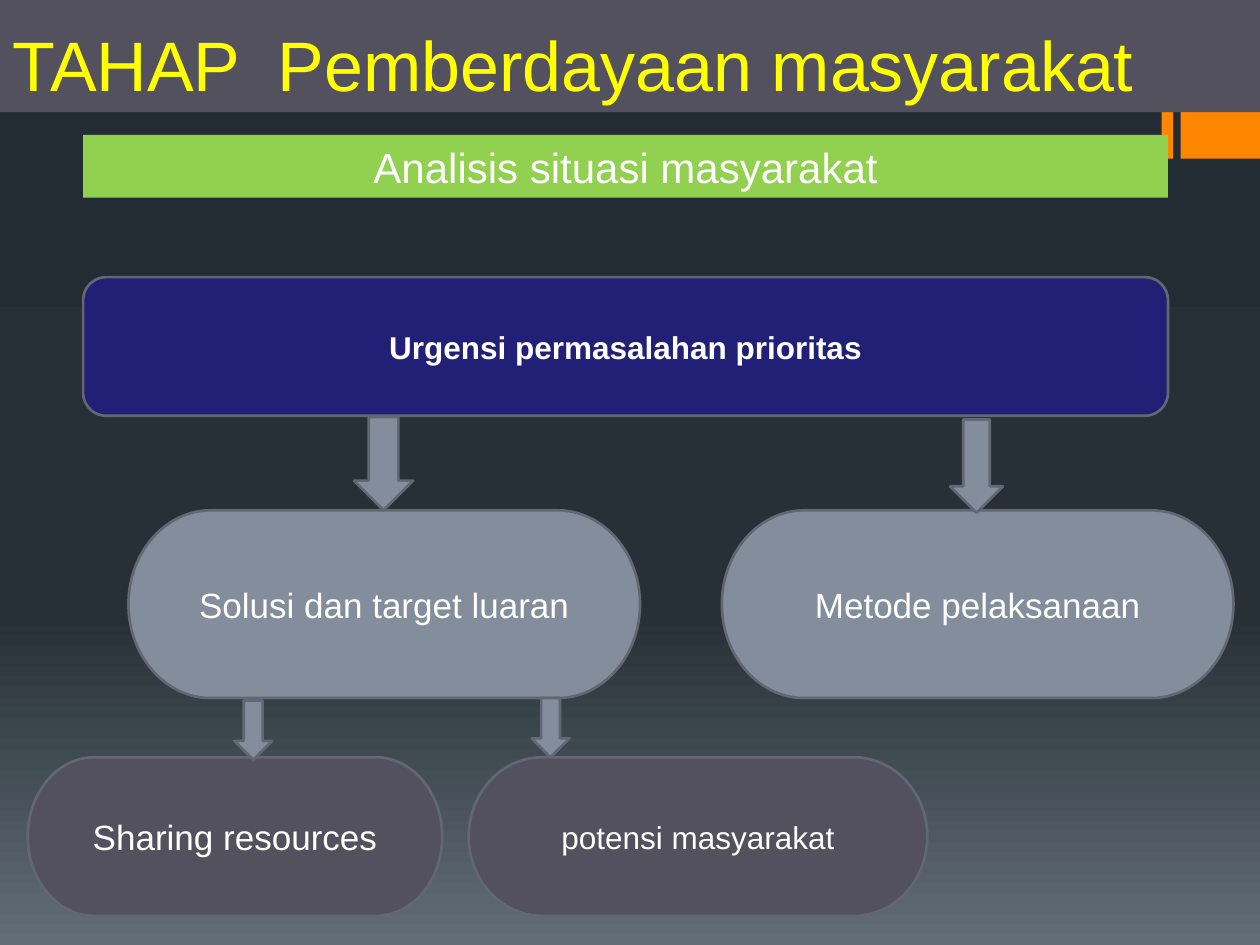
from copy import deepcopy
from typing import NamedTuple, Optional

from pptx import Presentation
from pptx.dml.color import RGBColor
from pptx.enum.shapes import MSO_SHAPE
from pptx.enum.text import MSO_ANCHOR, MSO_AUTO_SIZE, PP_ALIGN
from pptx.util import Inches, Pt

COLORS = {
    "night": "242C33",
    "slate": "273037",
    "mist": "636D76",
    "orange": "FF8600",
    "plum": "53515E",
    "navy": "222076",
    "steel": "838D9B",
    "outline": "616873",
    "green": "92D050",
    "yellow": "FFFF00",
    "white": "FFFFFF",
}
BACKGROUND_STOPS = [("night", 0), ("slate", 0.65), ("mist", 1)]
FONT = "Arial"


class Box(NamedTuple):
    kind: MSO_SHAPE
    left: float
    top: float
    width: float
    height: float
    fill: str
    text: str = ""
    size: int = 20
    bold: bool = False
    line: Optional[str] = "outline"


RECTANGLE = MSO_SHAPE.RECTANGLE
TERMINATOR = MSO_SHAPE.FLOWCHART_TERMINATOR
ARROW = MSO_SHAPE.DOWN_ARROW

ACCENTS = [
    Box(RECTANGLE, 9.22, 0.63, 0.09, 0.63, "orange", line=None),
    Box(RECTANGLE, 9.37, 0.63, 0.63, 0.63, "orange", line=None),
]
STAGES = [
    Box(MSO_SHAPE.ROUNDED_RECTANGLE, 0.66, 2.2, 8.61, 1.1, "navy",
        "Urgensi permasalahan prioritas", 18, bold=True),
    Box(TERMINATOR, 1.02, 4.05, 4.06, 1.49, "steel", "Solusi dan target luaran"),
    Box(TERMINATOR, 5.73, 4.05, 4.06, 1.49, "steel", "Metode pelaksanaan"),
    Box(ARROW, 2.81, 3.31, 0.47, 0.74, "steel"),
    Box(ARROW, 7.54, 3.33, 0.42, 0.74, "steel"),
    Box(TERMINATOR, 0.22, 6.01, 3.29, 1.26, "plum", "Sharing resources"),
    Box(TERMINATOR, 3.72, 6.01, 3.64, 1.26, "plum", "potensi masyarakat", 18),
    Box(ARROW, 1.86, 5.56, 0.3, 0.47, "steel"),
    Box(ARROW, 4.22, 5.54, 0.3, 0.47, "steel"),
    Box(RECTANGLE, 0.66, 1.07, 8.61, 0.5, "green",
        "Analisis situasi masyarakat", 24, line=None),
]


def rgb(name: str) -> RGBColor:
    return RGBColor.from_string(COLORS[name])


def paint_background(slide) -> None:
    fill = slide.background.fill
    fill.gradient()
    fill.gradient_angle = 270  # counter-clockwise, so top to bottom
    stop_list = fill._fill._gradFill.gsLst
    stop_list.append(deepcopy(stop_list[-1]))
    for stop, (color, position) in zip(fill.gradient_stops, BACKGROUND_STOPS):
        stop.color.rgb = rgb(color)
        stop.position = position


def write_text(shape, text: str, size: int, color: str, alignment: PP_ALIGN,
               anchor: MSO_ANCHOR, bold: bool = False) -> None:
    frame = shape.text_frame
    frame.text = text
    frame.word_wrap = True
    frame.auto_size = MSO_AUTO_SIZE.NONE
    frame.vertical_anchor = anchor
    paragraph = frame.paragraphs[0]
    paragraph.alignment = alignment
    font = paragraph.runs[0].font
    font.name = FONT
    font.size = Pt(size)
    font.bold = bold
    font.color.rgb = rgb(color)


def draw_box(slide, box: Box) -> None:
    shape = slide.shapes.add_shape(
        box.kind, Inches(box.left), Inches(box.top), Inches(box.width), Inches(box.height))
    shape.shadow.inherit = False
    shape.fill.solid()
    shape.fill.fore_color.rgb = rgb(box.fill)
    if box.line:
        shape.line.color.rgb = rgb(box.line)
        shape.line.width = Pt(1.5)
    else:
        shape.line.fill.background()
    if box.text:
        write_text(shape, box.text, box.size, "white", PP_ALIGN.CENTER,
                   MSO_ANCHOR.MIDDLE, box.bold)


def draw_title(slide) -> None:
    """Format the title band and lift it above the shapes drawn so far."""
    title = slide.shapes.title
    title.left, title.top = Inches(0), Inches(0)
    title.width, title.height = Inches(10), Inches(0.89)
    title.fill.solid()
    title.fill.fore_color.rgb = rgb("plum")
    write_text(title, "TAHAP  Pemberdayaan masyarakat", 40, "yellow",
               PP_ALIGN.LEFT, MSO_ANCHOR.BOTTOM)
    slide.shapes._spTree.append(title._element)


def main() -> None:
    presentation = Presentation()
    presentation.slide_width = Inches(10)
    presentation.slide_height = Inches(7.5)
    slide = presentation.slides.add_slide(presentation.slide_layouts.get_by_name("Title Only"))
    paint_background(slide)
    for accent in ACCENTS:
        draw_box(slide, accent)
    draw_title(slide)
    for stage in STAGES:
        draw_box(slide, stage)
    presentation.save("out.pptx")


if __name__ == "__main__":
    main()
